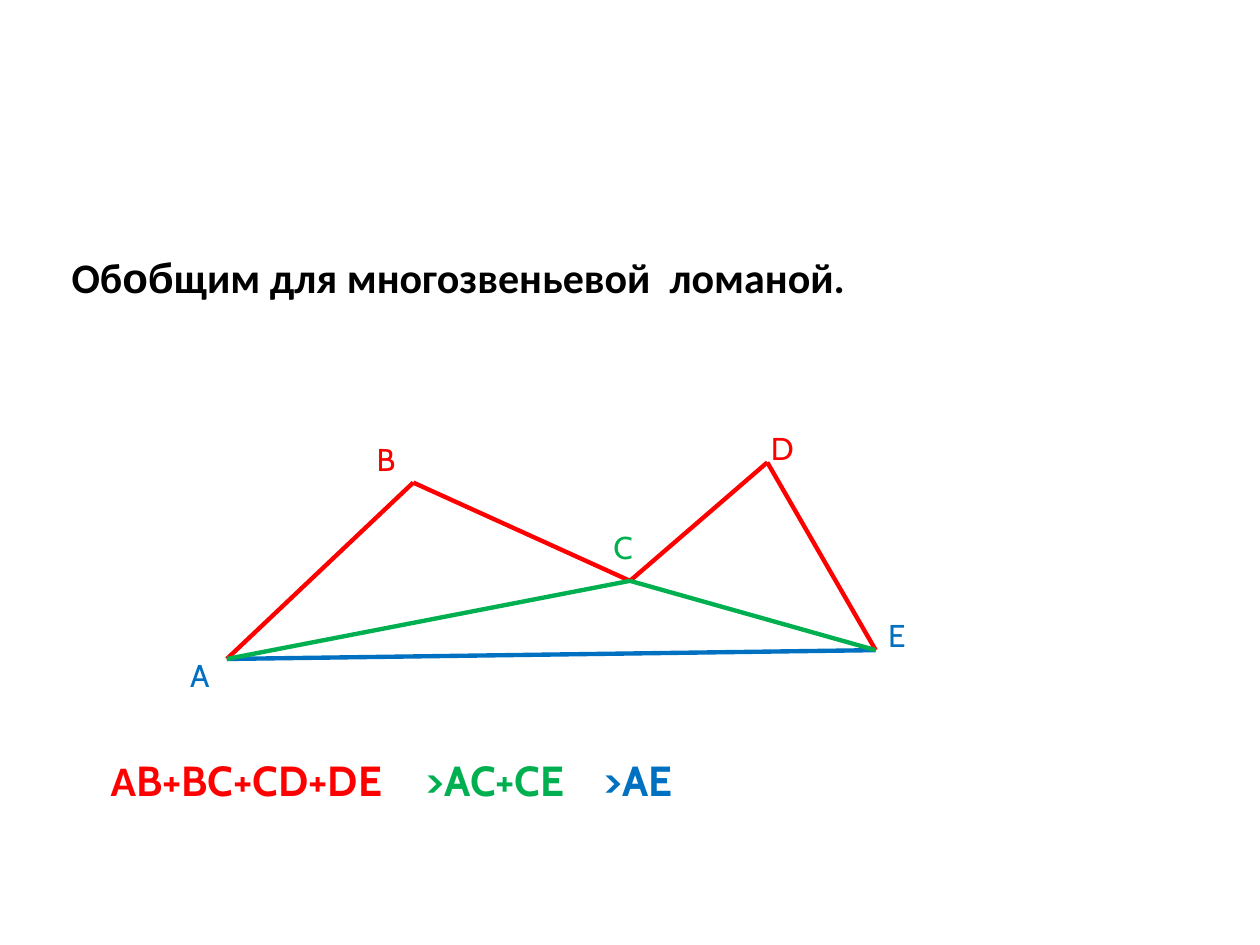
"""Build a slide that extends the triangle inequality to a polyline of many links."""
import pptx
import pptx.dml.color
import pptx.enum.shapes
import pptx.enum.text
import pptx.util

BLACK = pptx.dml.color.RGBColor(0x00, 0x00, 0x00)
RED = pptx.dml.color.RGBColor(0xFF, 0x00, 0x00)
GREEN = pptx.dml.color.RGBColor(0x00, 0xB0, 0x50)
BLUE = pptx.dml.color.RGBColor(0x00, 0x70, 0xC0)

presentation = pptx.Presentation()
presentation.slide_width = pptx.util.Inches(10)
presentation.slide_height = pptx.util.Inches(7.5)
slide = presentation.slides.add_slide(presentation.slide_layouts[6])
COLUMN = presentation.slide_width / 100
ROW = presentation.slide_height / 75


def add_text(left, top, width, height, runs, size, color, bold=False):
    box = slide.shapes.add_textbox(
        round(left * COLUMN), round(top * ROW), round(width * COLUMN), round(height * ROW)
    )
    box.text_frame.word_wrap = True
    box.text_frame.auto_size = pptx.enum.text.MSO_AUTO_SIZE.SHAPE_TO_FIT_TEXT
    paragraph = box.text_frame.paragraphs[0]
    paragraph.font.size = pptx.util.Pt(size)
    paragraph.font.bold = bold
    paragraph.font.color.rgb = color
    for text, font_name in runs:
        run = paragraph.add_run()
        run.text = text
        run.font.name = font_name


heading = [("Об", "Calibri"), ("об", "Arial"), ("щим для многозвеньевой  ломаной.", "Calibri")]
add_text(4.7, 19.5, 90.6, 5, heading, 24, BLACK, True)

vertices = {"A": (18, 52.3), "B": (32.8, 38.3), "C": (50, 46.1), "D": (60.9, 36.7), "E": (69.5, 51.6)}
segments = [
    ("AE", BLUE),
    ("AB", RED),
    ("BC", RED),
    ("CD", RED),
    ("DE", RED),
    ("CE", GREEN),
    ("AC", GREEN),
]
for (start, end), color in segments:
    start_column, start_row = vertices[start]
    end_column, end_row = vertices[end]
    line = slide.shapes.add_connector(
        pptx.enum.shapes.MSO_CONNECTOR.STRAIGHT,
        round(start_column * COLUMN),
        round(start_row * ROW),
        round(end_column * COLUMN),
        round(end_row * ROW),
    )
    line.line.color.rgb = color
    line.line.width = pptx.util.Pt(2.5)
    line._element.spPr.append(pptx.oxml.parse_xml(
        '<a:effectLst xmlns:a="http://schemas.openxmlformats.org/drawingml/2006/main"/>'
    ))

vertex_labels = [
    ("A", 14.1, 51.6, 3.9, BLUE),
    ("B", 28.9, 34.4, 3.1, RED),
    ("C", 47.7, 41.4, 3.9, GREEN),
    ("D", 60.2, 33.6, 3.1, RED),
    ("E", 69.5, 48.4, 3.9, BLUE),
]
for letter, left, top, width, color in vertex_labels:
    add_text(left, top, width, 4, [(letter, "Cabin")], 18, color)

inequality = [
    ([("А", "Calibri"), ("B+BC+CD+DE", "Cabin")], 7.8, 30.5, RED),
    ([(">AC+CE", "Cabin")], 32.8, 20.5, GREEN),
    ([(">AE", "Cabin")], 46.9, 14.2, BLUE),
]
for runs, left, width, color in inequality:
    add_text(left, 59.4, width, 5, runs, 24, color, True)

presentation.save("out.pptx")
